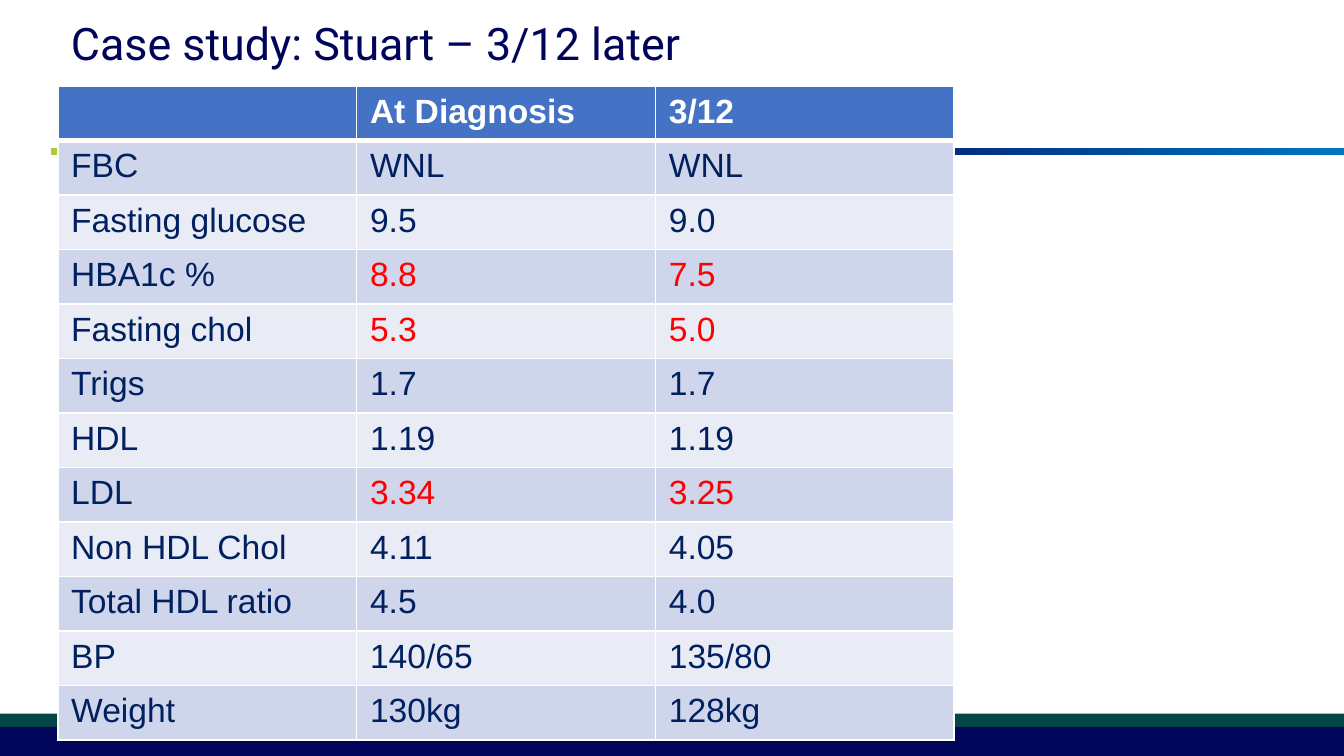
from lxml import etree
from pptx import Presentation
from pptx.dml.color import RGBColor
from pptx.enum import shapes, text
from pptx.oxml import ns
from pptx.util import Inches, Pt

WHITE = RGBColor(0xFF, 0xFF, 0xFF)
NAVY = RGBColor(0x00, 0x05, 0x59)
GREEN = RGBColor(0x03, 0x47, 0x48)
LIME = RGBColor(0xA6, 0xCE, 0x39)
SKY = RGBColor(0x00, 0x76, 0xC0)
BLUE = RGBColor(0x44, 0x72, 0xC4)
INK = RGBColor(0x00, 0x20, 0x60)
RED = RGBColor(0xFF, 0x00, 0x00)
BANDS = (RGBColor(0xE9, 0xEB, 0xF5), RGBColor(0xCF, 0xD5, 0xEA))

STOPS = ((0, LIME), (36, GREEN), (52, NAVY), (100, SKY))
ROWS = (
    ("", "At Diagnosis", "3/12"),
    ("FBC", "WNL", "WNL"),
    ("Fasting glucose", "9.5", "9.0"),
    ("HBA1c %", "8.8", "7.5"),
    ("Fasting chol", "5.3", "5.0"),
    ("Trigs", "1.7", "1.7"),
    ("HDL", "1.19", "1.19"),
    ("LDL", "3.34", "3.25"),
    ("Non HDL Chol", "4.11", "4.05"),
    ("Total HDL ratio", "4.5", "4.0"),
    ("BP", "140/65", "135/80"),
    ("Weight", "130kg", "128kg"),
)
HIGH = ("HBA1c %", "Fasting chol", "LDL")


def add_bar(slide, left, top, width, height, color):
    bar = slide.shapes.add_shape(
        shapes.MSO_SHAPE.RECTANGLE,
        Inches(left), Inches(top), Inches(width), Inches(height))
    bar.shadow.inherit = False
    bar.line.fill.background()
    bar.fill.solid()
    bar.fill.fore_color.rgb = color
    return bar


def blend(bar, stops):
    """Fill the bar with a left-to-right gradient of (percent, colour) stops."""
    bar.fill.gradient()
    bar.fill.gradient_angle = 0
    items = bar._element.spPr.find(ns.qn("a:gradFill")).find(ns.qn("a:gsLst"))
    for old in list(items):
        items.remove(old)
    for pos, color in stops:
        stop = etree.SubElement(items, ns.qn("a:gs"), pos=str(pos * 1000))
        etree.SubElement(stop, ns.qn("a:srgbClr"), val=str(color))


def style(frame, font, size, color, bold=False):
    for run in frame.paragraphs[0].runs:
        run.font.name = font
        run.font.size = Pt(size)
        run.font.color.rgb = color
        run.font.bold = bold


def add_title(slide, words):
    box = slide.shapes.add_textbox(
        Inches(0.43), Inches(-0.03), Inches(9.43), Inches(0.7))
    frame = box.text_frame
    frame.word_wrap = True
    frame.vertical_anchor = text.MSO_ANCHOR.MIDDLE
    frame.text = words
    style(frame, "Roboto", 24, NAVY)


def edge(cell, top, bottom):
    """Draw white cell borders; top and bottom widths are in points."""
    props = cell._tc.get_or_add_tcPr()
    sides = (("L", 1), ("R", 1), ("T", top), ("B", bottom))
    for spot, (side, width) in enumerate(sides):
        line = etree.Element(ns.qn(f"a:ln{side}"), w=str(Pt(width)))
        fill = etree.SubElement(line, ns.qn("a:solidFill"))
        etree.SubElement(fill, ns.qn("a:srgbClr"), val=str(WHITE))
        props.insert(spot, line)


def add_results(slide, rows):
    table = slide.shapes.add_table(
        len(rows), len(rows[0]),
        Inches(0.43), Inches(0.64), Inches(6.67), Inches(4.87)).table
    for r, row in enumerate(rows):
        for c, words in enumerate(row):
            cell = table.cell(r, c)
            cell.text = words
            cell.fill.solid()
            cell.fill.fore_color.rgb = BANDS[r % 2] if r else BLUE
            edge(cell, 3 if r == 1 else 1, 3 if r == 0 else 1)
            if r == 0:
                color = WHITE
            else:
                color = RED if c and row[0] in HIGH else INK
            style(cell.text_frame, "Arial", 18, color, bold=r == 0)


def main():
    deck = Presentation()
    deck.slide_width = Inches(10)
    deck.slide_height = Inches(10) * 9 // 16
    slide = deck.slides.add_slide(deck.slide_layouts[6])
    add_bar(slide, 0, 5.31, 10, 0.1, GREEN)
    add_bar(slide, 0, 5.41, 10, 0.25, NAVY)
    blend(add_bar(slide, 0.38, 1.1, 9.62, 0.05, LIME), STOPS)
    add_title(slide, "Case study: Stuart – 3/12 later")
    add_results(slide, ROWS)
    deck.save("out.pptx")


if __name__ == "__main__":
    main()
